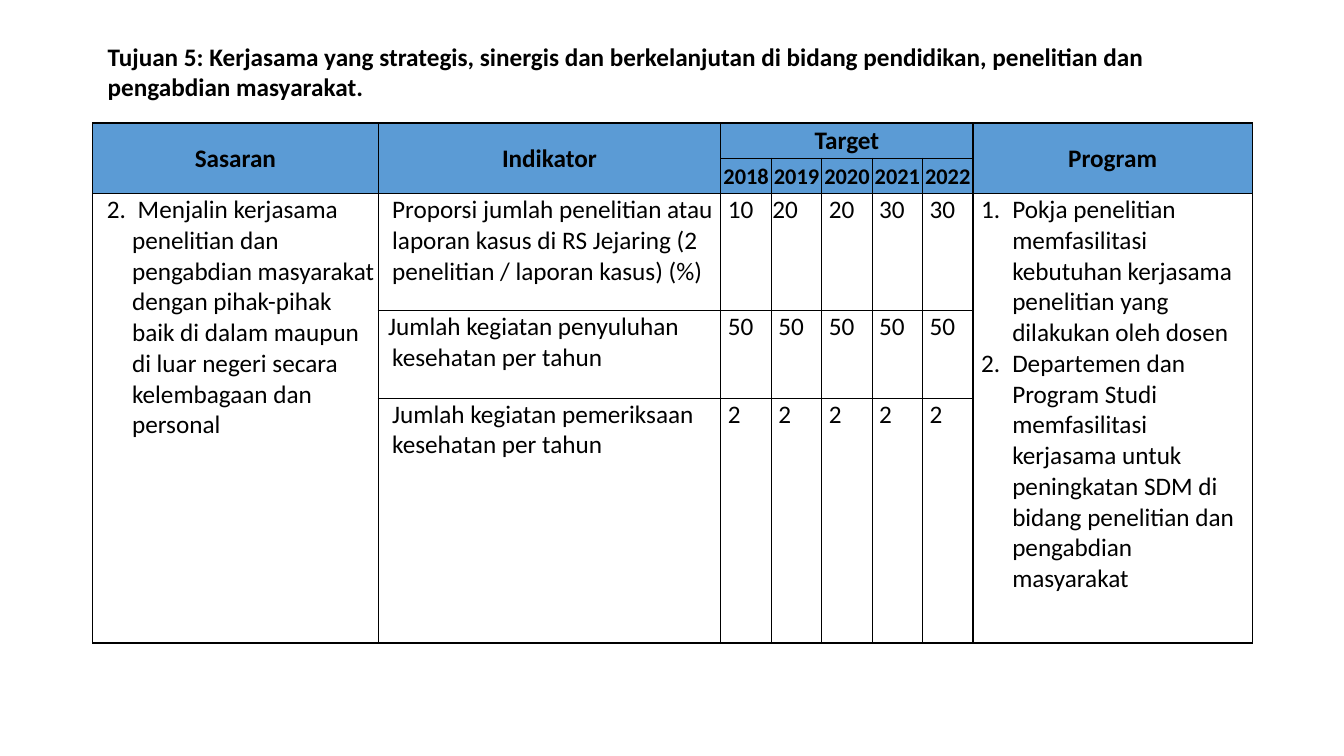
from pptx import Presentation
from pptx.dml.color import RGBColor
from pptx.enum.text import MSO_ANCHOR, PP_ALIGN
from pptx.oxml import parse_xml
from pptx.oxml.ns import nsdecls
from pptx.util import Inches, Pt

BLACK = RGBColor(0, 0, 0)
BLUE = RGBColor(0x5B, 0x9B, 0xD5)

TITLE = ("Tujuan 5: Kerjasama yang strategis, sinergis dan berkelanjutan "
         "di bidang pendidikan, penelitian dan pengabdian masyarakat.")
HEADS = {0: "Sasaran", 1: "Indikator", 2: "Target", 7: "Program"}
YEARS = ["2018", "2019", "2020", "2021", "2022"]
GOAL = (" Menjalin kerjasama penelitian dan pengabdian masyarakat dengan "
        "pihak-pihak baik di dalam maupun di luar negeri secara "
        "kelembagaan dan personal")
ROWS = [
    ("Proporsi jumlah penelitian atau laporan kasus di RS Jejaring "
     "(2 penelitian / laporan kasus) (%)", 0, [10, 20, 20, 30, 30]),
    ("Jumlah kegiatan penyuluhan kesehatan per tahun", -0.04, [50] * 5),
    ("Jumlah kegiatan pemeriksaan kesehatan per tahun", 0, [2] * 5),
]
PLANS = [
    "Pokja penelitian memfasilitasi kebutuhan kerjasama penelitian yang "
    "dilakukan oleh dosen",
    "Departemen dan Program Studi memfasilitasi kerjasama untuk peningkatan "
    "SDM di bidang penelitian dan pengabdian masyarakat",
]
WIDTHS = [2.83, 3.4] + [0.5] * 5 + [2.77]
HEIGHTS = [0.35, 0.35, 1.16, 0.87, 2.43]
MERGES = [(0, 0, 1, 0), (0, 1, 1, 1), (0, 2, 0, 6), (0, 7, 1, 7),
          (2, 0, 4, 0), (2, 7, 4, 7)]


def write(frame, *texts, size=18, bold=False, align=PP_ALIGN.LEFT,
          left=0, first=0, start=None):
    for i, text in enumerate(texts):
        para = frame.paragraphs[0] if i == 0 else frame.add_paragraph()
        props = para._p.get_or_add_pPr()
        props.set("marL", str(Inches(left)))
        props.set("indent", str(Inches(first)))
        if start:
            props.append(parse_xml(
                f'<a:buAutoNum {nsdecls("a")} type="arabicPeriod" '
                f'startAt="{start}"/>'))
        para.alignment = align
        run = para.add_run()
        run.text = text
        font = run.font
        font.name, font.size, font.bold = "Calibri", Pt(size), bold
        font.color.rgb = BLACK


def style(cell, head):
    cell.margin_left = cell.margin_right = cell.margin_top = Inches(0.01)
    cell.margin_bottom = 0
    cell.vertical_anchor = MSO_ANCHOR.MIDDLE if head else MSO_ANCHOR.TOP
    props = cell._tc.get_or_add_tcPr()
    for side in "LRTB":
        props.append(parse_xml(
            f'<a:ln{side} {nsdecls("a")} w="{Pt(1)}"><a:solidFill>'
            f'<a:srgbClr val="{BLACK}"/></a:solidFill></a:ln{side}>'))
    if head:
        cell.fill.solid()
        cell.fill.fore_color.rgb = BLUE
    else:
        cell.fill.background()


def main():
    deck = Presentation()
    deck.slide_width, deck.slide_height = Inches(13.33), Inches(7.5)
    slide = deck.slides.add_slide(deck.slide_layouts[6])

    table = slide.shapes.add_table(
        len(HEIGHTS), len(WIDTHS), Inches(0.92), Inches(1.22),
        Inches(sum(WIDTHS)), Inches(sum(HEIGHTS))).table
    table.first_row = table.horz_banding = False
    for col, width in zip(table.columns, WIDTHS):
        col.width = Inches(width)
    for row, height in zip(table.rows, HEIGHTS):
        row.height = Inches(height)
    for r in range(len(HEIGHTS)):
        for c in range(len(WIDTHS)):
            style(table.cell(r, c), r < 2)
    for top, left, low, right in MERGES:
        table.cell(top, left).merge(table.cell(low, right))

    def fill(r, c, *texts, **form):
        write(table.cell(r, c).text_frame, *texts, **form)

    for c, text in HEADS.items():
        fill(0, c, text, bold=True, align=PP_ALIGN.CENTER)
    for c, year in enumerate(YEARS, 2):
        fill(1, c, year, size=16, bold=True, align=PP_ALIGN.CENTER)
    fill(2, 0, GOAL, left=0.38, first=-0.25, start=2)
    fill(2, 7, *PLANS, left=0.38, first=-0.31, start=1)
    for r, (text, first, marks) in enumerate(ROWS, 2):
        fill(r, 1, text, left=0.13, first=first)
        for c, mark in enumerate(marks, 2):
            fill(r, c, str(mark), left=0 if (r, c) == (2, 3) else 0.06)

    title = slide.shapes.add_textbox(
        Inches(0.97), Inches(0.36), Inches(11.16), Inches(0.71)).text_frame
    title.word_wrap = True
    write(title, TITLE, bold=True)
    deck.save("out.pptx")


if __name__ == "__main__":
    main()
